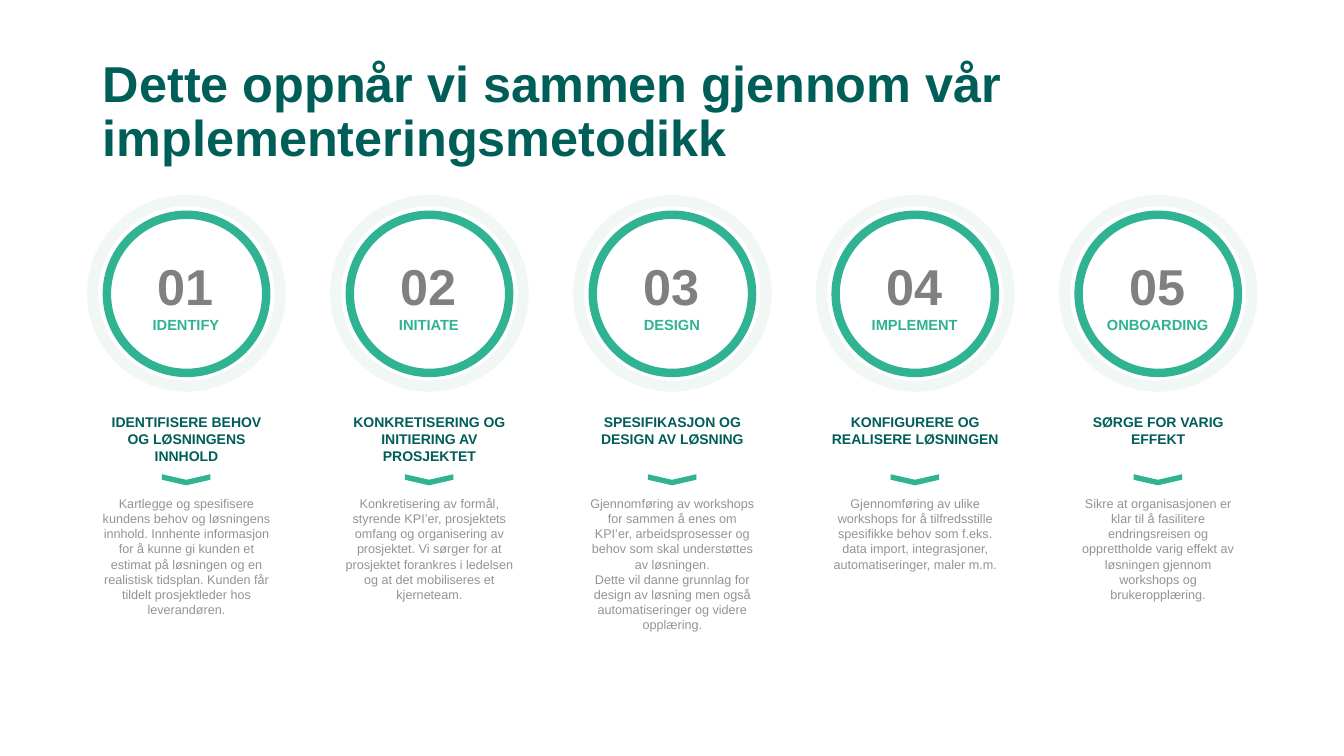
from dataclasses import dataclass

from pptx import Presentation
from pptx.dml.color import RGBColor
from pptx.enum.shapes import MSO_SHAPE as Shape
from pptx.enum.text import MSO_ANCHOR as Anchor, PP_ALIGN as Align
from pptx.slide import Slide
from pptx.text.text import TextFrame
from pptx.util import Pt

COLORS = {
    "dark": "005E58",
    "green": "30B393",
    "halo": "F1F7F5",
    "number": "808080",
    "body": "979292",
}
LEFT, STEP, WIDTH = 66.24, 173.52, 133.92


@dataclass(frozen=True)
class Phase:
    name: str
    heading: str
    heading_lines: int
    body: tuple[str, ...]
    body_lines: int


@dataclass(frozen=True)
class Ring:
    dx: float
    top: float
    width: float
    height: float
    color: str
    weight: float


RINGS = (
    Ring(0, 143.3, WIDTH, 132.5, "halo", 8),
    Ring(10.1, 153.4, 113.8, 113, "green", 6),
)

PHASES = (
    Phase("IDENTIFY", "IDENTIFISERE BEHOV OG LØSNINGENS INNHOLD", 3,
          ("Kartlegge og spesifisere kundens behov og løsningens innhold. "
           "Innhente informasjon for å kunne gi kunden et estimat på løsningen "
           "og en realistisk tidsplan. Kunden får tildelt prosjektleder hos "
           "leverandøren.",), 9),
    Phase("INITIATE", "KONKRETISERING OG INITIERING AV PROSJEKTET", 3,
          ("Konkretisering av formål, styrende KPI’er, prosjektets omfang og "
           "organisering av prosjektet. Vi sørger for at prosjektet forankres i "
           "ledelsen og at det mobiliseres et kjerneteam.",), 7),
    Phase("DESIGN", "SPESIFIKASJON OG DESIGN AV LØSNING", 2,
          ("Gjennomføring av workshops for sammen å enes om KPI’er, "
           "arbeidsprosesser og behov som skal understøttes av løsningen.",
           "Dette vil danne grunnlag for design av løsning men også "
           "automatiseringer og videre opplæring."), 9),
    Phase("IMPLEMENT", "KONFIGURERE OG REALISERE LØSNINGEN", 2,
          ("Gjennomføring av ulike workshops for å tilfredsstille spesifikke "
           "behov som f.eks. data import, integrasjoner, automatiseringer, "
           "maler m.m.",), 5),
    Phase("ONBOARDING", "SØRGE FOR VARIG EFFEKT", 2,
          ("Sikre at organisasjonen er klar til å fasilitere endringsreisen og "
           "opprettholde varig effekt av løsningen gjennom workshops og "
           "brukeropplæring.",), 7),
)


def rgb(name: str) -> RGBColor:
    return RGBColor.from_string(COLORS[name])


def add_text(tf: TextFrame, text: str, size: float, color: str,
             bold: bool = False, align: Align = Align.CENTER) -> None:
    p = tf.paragraphs[0]
    if p.runs:
        p = tf.add_paragraph()
    p.alignment = align
    r = p.add_run()
    r.text = text
    r.font.name = "Arial"
    r.font.size = Pt(size)
    r.font.bold = bold
    r.font.color.rgb = rgb(color)


def add_box(s: Slide, x: float, y: float, w: float, h: float,
            anchor: Anchor = Anchor.TOP) -> TextFrame:
    tf = s.shapes.add_textbox(Pt(x), Pt(y), Pt(w), Pt(h)).text_frame
    tf.word_wrap = True
    tf.vertical_anchor = anchor
    return tf


def add_ring(s: Slide, x: float, ring: Ring) -> None:
    sp = s.shapes.add_shape(Shape.OVAL, Pt(x + ring.dx), Pt(ring.top),
                            Pt(ring.width), Pt(ring.height))
    sp.shadow.inherit = False
    sp.fill.background()
    sp.line.color.rgb = rgb(ring.color)
    sp.line.width = Pt(ring.weight)


def add_chevron(s: Slide, x: float) -> None:
    sp = s.shapes.add_shape(Shape.CHEVRON, Pt(x + 62.8), Pt(325.4),
                            Pt(7.9), Pt(34.6))
    sp.rotation = 90
    sp.shadow.inherit = False
    sp.fill.solid()
    sp.fill.fore_color.rgb = rgb("green")
    sp.line.fill.background()


def add_phase(s: Slide, index: int, phase: Phase) -> None:
    x = LEFT + index * STEP
    for ring in RINGS:
        add_ring(s, x, ring)
    tf = add_box(s, x + 10.8, 178.6, 111.6, 63.4, Anchor.MIDDLE)
    add_text(tf, f"{index + 1:02}", 36, "number", True)
    add_text(tf, phase.name, 10.5, "green", True)
    add_chevron(s, x)
    tf = add_box(s, x, 291.6, WIDTH, phase.heading_lines * 12.2 + 7.2, Anchor.MIDDLE)
    add_text(tf, phase.heading, 10, "dark", True)
    tf = add_box(s, x, 350.6, WIDTH, phase.body_lines * 10.8 + 7.2)
    for text in phase.body:
        add_text(tf, text, 9, "body")


def add_title(s: Slide, text: str) -> None:
    sp = s.shapes.title
    sp.left, sp.top, sp.width, sp.height = Pt(LEFT), Pt(47.5), Pt(828), Pt(67)
    tf = sp.text_frame
    tf.word_wrap = True
    tf.vertical_anchor = Anchor.MIDDLE
    add_text(tf, text, 36, "dark", True, Align.LEFT)
    tf.paragraphs[0].line_spacing = 0.9


def main() -> None:
    prs = Presentation()
    prs.slide_width, prs.slide_height = Pt(960), Pt(540)
    s = prs.slides.add_slide(prs.slide_layouts[5])
    add_title(s, "Dette oppnår vi sammen gjennom vår implementeringsmetodikk")
    for index, phase in enumerate(PHASES):
        add_phase(s, index, phase)
    prs.save("out.pptx")


if __name__ == "__main__":
    main()
